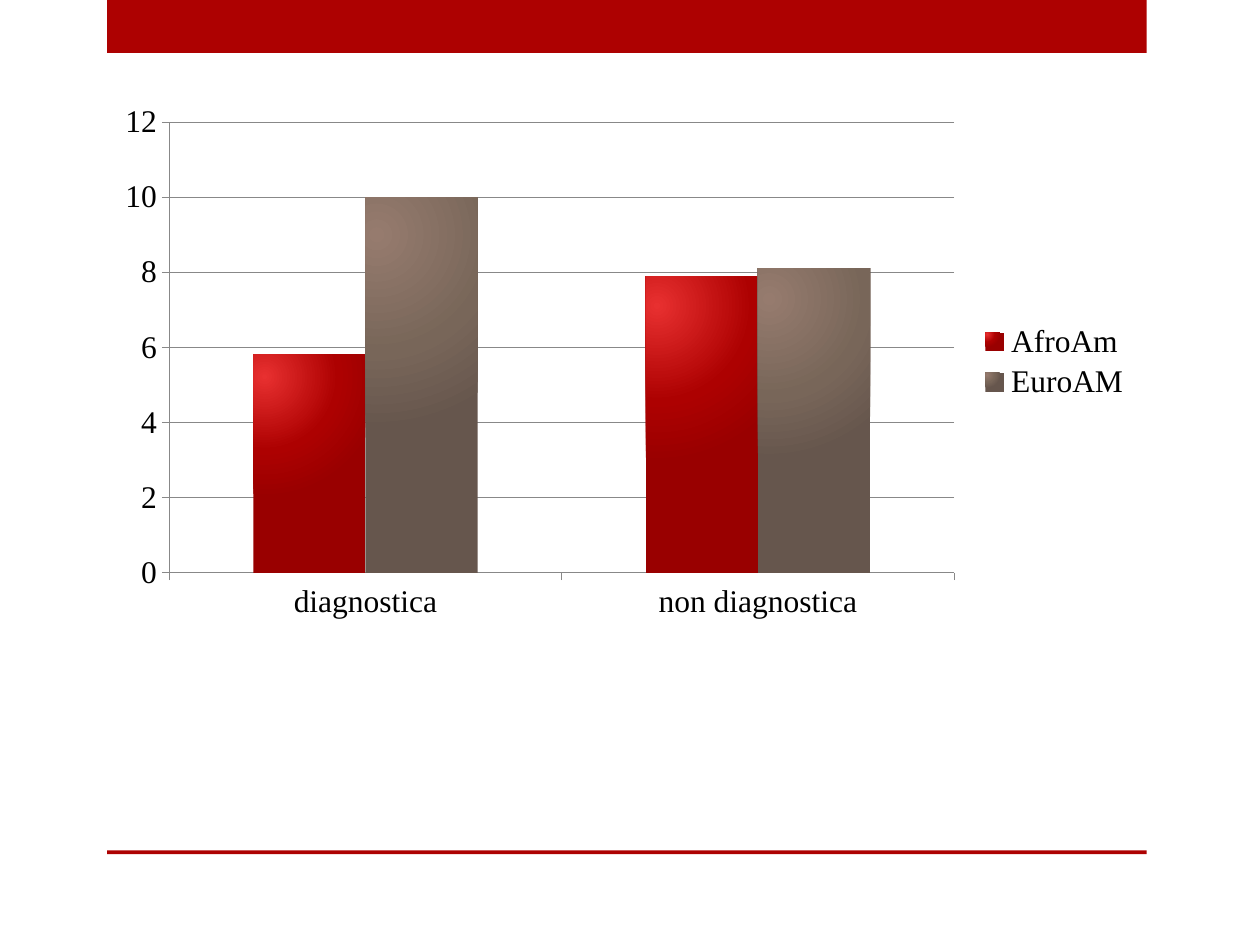
import pptx
import pptx.chart.data
import pptx.dml.color
import pptx.enum.chart
import pptx.oxml
import pptx.oxml.ns
import pptx.util

Inches = pptx.util.Inches
Pt = pptx.util.Pt
RGB = pptx.dml.color.RGBColor.from_string
COLORS = {"red": "AD0101", "axis": "888888", "text": "000000"}
GRADIENTS = {
    "AfroAm": ["E83030", "AD0101", "990000"],
    "EuroAM": ["967B6E", "786659", "66564D"],
}

prs = pptx.Presentation()
prs.slide_width = Inches(10)
prs.slide_height = Inches(7.5)
s = prs.slides.add_slide(prs.slide_layouts[6])

for top, height in [(0, 0.42), (6.75, 0.03)]:
    sp = s.shapes.add_shape(
        pptx.enum.shapes.MSO_SHAPE.RECTANGLE,
        Inches(0.85), Inches(top), Inches(8.25), Inches(height))
    sp.shadow.inherit = False
    sp.fill.solid()
    sp.fill.fore_color.rgb = RGB(COLORS["red"])
    sp.line.fill.background()

data = pptx.chart.data.CategoryChartData()
data.categories = ["diagnostica", "non diagnostica"]
data.add_series("AfroAm", [5.8, 7.9])
data.add_series("EuroAM", [10, 8.1])
chart = s.shapes.add_chart(
    pptx.enum.chart.XL_CHART_TYPE.COLUMN_CLUSTERED,
    Inches(0.83), Inches(0.75), Inches(8.25), Inches(4.25), data).chart
chart.has_title = False
chart.font.name = "Times New Roman"
chart.font.size = Pt(18)
chart.font.color.rgb = RGB(COLORS["text"])
chart.has_legend = True
chart.legend.position = pptx.enum.chart.XL_LEGEND_POSITION.RIGHT
chart.legend.include_in_layout = False

axis = chart.value_axis
axis.minimum_scale = 0
axis.maximum_scale = 12
axis.major_unit = 2
axis.has_major_gridlines = True
for line in [axis.major_gridlines.format.line, axis.format.line,
             chart.category_axis.format.line]:
    line.color.rgb = RGB(COLORS["axis"])
    line.width = Pt(0.75)
for axis in [chart.value_axis, chart.category_axis]:
    axis.major_tick_mark = pptx.enum.chart.XL_TICK_MARK.OUTSIDE

plot = chart.plots[0]
plot.gap_width = 150
plot.overlap = 0
plot.vary_by_categories = False
for series in plot.series:
    stops = "".join(
        f'<a:gs pos="{pos}"><a:srgbClr val="{color}"/></a:gs>'
        for pos, color in zip([0, 60000, 100000], GRADIENTS[series.name]))
    gradient = pptx.oxml.parse_xml(
        f'<a:gradFill {pptx.oxml.ns.nsdecls("a")} rotWithShape="1">'
        f'<a:gsLst>{stops}</a:gsLst><a:path path="circle">'
        '<a:fillToRect l="10000" t="10000" r="90000" b="90000"/>'
        '</a:path></a:gradFill>')
    series.format.line.fill.background()
    series._element.get_or_add_spPr().insert(0, gradient)

prs.save("out.pptx")
